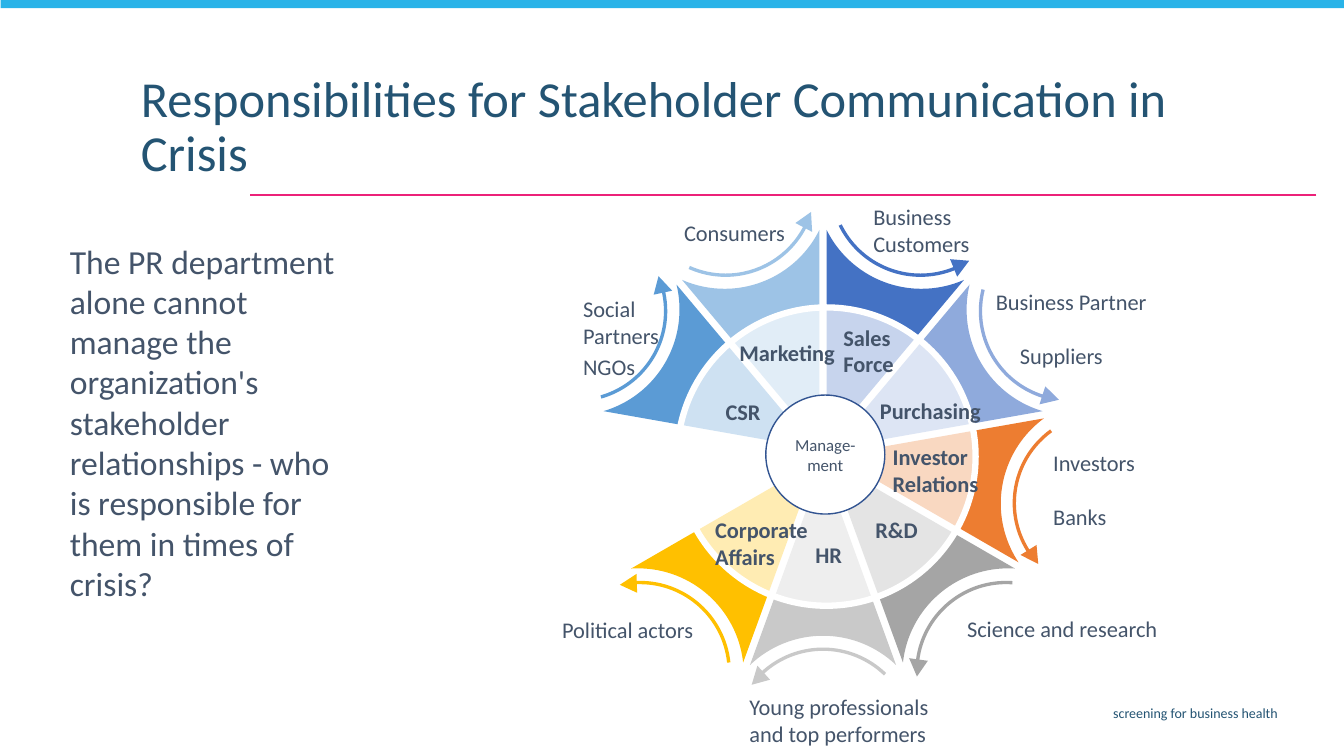
import math
from dataclasses import dataclass

import pptx
import pptx.dml.color
import pptx.enum.shapes
import pptx.enum.text
import pptx.util
from lxml import etree
from pptx.oxml.ns import qn

Pt = pptx.util.Pt
Align = pptx.enum.text.PP_ALIGN
Anchor = pptx.enum.text.MSO_ANCHOR
Preset = pptx.enum.shapes.MSO_SHAPE
Point = tuple[float, float]
Segment = list[Point]

FONT = "Calibri"
TEXT_COLOUR = "44546A"
HEADING_COLOUR = "245473"

# Wheel geometry: points and degrees, angles clockwise from north
WHEEL_CENTRE = (587.9, 324)
SECTOR_HALF_SPAN = 20
APEX_OFFSET = 7.5
SECTOR_LENGTH = 152.6
RIM_RADIUS = 75.6
RIM_DISTANCE, ARROW_DISTANCE = 205.7, 203.5
RIM_HALF_SPAN = math.degrees(
    math.asin(SECTOR_LENGTH * math.sin(math.radians(SECTOR_HALF_SPAN)) / RIM_RADIUS)
)
ARROW_INNER, ARROW_OUTER = 62.6, 65
HEAD_INNER, HEAD_OUTER = 56.5, 70
ARROW_TAIL, ARROW_BASE, ARROW_TIP = 44, -42, -53


@dataclass
class Sector:
    angle: float
    colour: str


@dataclass
class Label:
    text: str
    left: float
    top: float
    width: float
    bold: bool = False
    align: Align = Align.LEFT


SECTORS = [
    Sector(20, "4472C4"),
    Sector(340, "9DC3E6"),
    Sector(300, "5B9BD5"),
    Sector(220, "FFC000"),
    Sector(180, "C9C9C9"),
    Sector(140, "A5A5A5"),
    Sector(100, "ED7D31"),
    Sector(60, "8FAADC"),
]

LABELS = [
    Label("CSR", 511.2, 280.8, 39.6, bold=True),
    Label("Marketing", 521.1, 238.7, 83.5, bold=True),
    Label("Sales\nForce", 595.4, 227.7, 52.6, bold=True),
    Label("Purchasing", 621.4, 280.1, 87.8, bold=True),
    Label("Investor\nRelations", 630.5, 312.9, 76.3, bold=True),
    Label("R&D", 618.2, 365.3, 45.4, bold=True),
    Label("HR", 575.3, 383, 33.8, bold=True),
    Label("Corporate\nAffairs", 503.7, 365.3, 82.1, bold=True),
    Label("Social\nPartners", 409.4, 207.4, 69.8),
    Label("NGOs", 409.4, 248.4, 52.6),
    Label("Consumers", 481.5, 152.9, 87.8),
    Label("Business\nCustomers", 616.7, 141.8, 84.2),
    Label("Business Partner", 704.2, 202.3, 123.8),
    Label("Suppliers", 721.4, 240.9, 74.2),
    Label("Investors", 745.2, 317.2, 73.4),
    Label("Banks", 745.2, 355.7, 53.3),
    Label("Science and research", 683.7, 435.6, 151.9),
    Label("Young professionals\nand top performers", 528.2, 491.8, 144),
    Label("Political actors", 392.8, 436.3, 109.4, align=Align.RIGHT),
]


def colour(value: str) -> pptx.dml.color.RGBColor:
    return pptx.dml.color.RGBColor.from_string(value)


def polar(origin: Point, radius: float, angle: float) -> Point:
    radians = math.radians(angle)
    return origin[0] + radius * math.sin(radians), origin[1] - radius * math.cos(radians)


def arc(origin: Point, radius: float, start: float, end: float) -> list[Segment]:
    """Return two Bézier segments that meet where the arc is level or upright."""
    extreme = 90 * round((start + end) / 180)
    segments = []
    for first, last in ((start, extreme), (extreme, end)):
        handle = 4 / 3 * math.tan(math.radians(last - first) / 4) * radius
        finish = polar(origin, radius, last)
        segments.append([
            polar(polar(origin, radius, first), handle, first + 90),
            polar(finish, -handle, last + 90),
            finish,
        ])
    return segments


def format_shape(shape, fill: str, line: str = "", line_width: float = 0) -> None:
    shape.shadow.inherit = False
    shape.fill.solid()
    shape.fill.fore_color.rgb = colour(fill)
    if line:
        shape.line.color.rgb = colour(line)
        shape.line.width = Pt(line_width)
    else:
        shape.line.fill.background()


def add_outline(shapes, start: Point, segments: list[Segment], fill: str) -> None:
    """Draw a closed outline; one-point segments are straight, three-point ones Bézier."""
    builder = shapes.build_freeform(Pt(start[0]), Pt(start[1]))
    builder.add_line_segments([(Pt(x), Pt(y)) for segment in segments for x, y in segment])
    shape = builder.convert_to_shape()
    steps = iter(list(shape._element.iter(qn("a:lnTo"))))
    for segment in segments:
        step = next(steps)
        if len(segment) == 3:
            step.tag = qn("a:cubicBezTo")
            for extra in (next(steps), next(steps)):
                step.append(extra[0])
                extra.getparent().remove(extra)
    format_shape(shape, fill)


def add_circle(slide, left: float, top: float, diameter: float, line: str, line_width: float):
    circle = slide.shapes.add_shape(Preset.OVAL, Pt(left), Pt(top), Pt(diameter), Pt(diameter))
    format_shape(circle, "FFFFFF", line, line_width)
    return circle


def write_text(shape, text: str, size: float, font_colour: str = TEXT_COLOUR,
               bold: bool = False, align: Align = Align.LEFT, wrap: bool = True,
               anchor: Anchor = Anchor.TOP) -> None:
    frame = shape.text_frame
    frame.word_wrap = wrap
    frame.auto_size = pptx.enum.text.MSO_AUTO_SIZE.NONE
    frame.vertical_anchor = anchor
    paragraph = frame.paragraphs[0]
    paragraph.alignment = align
    for index, line in enumerate(text.split("\n")):
        if index:
            paragraph.add_line_break()
        run = paragraph.add_run()
        run.text = line
        run.font.name = FONT
        run.font.size = Pt(size)
        run.font.bold = bold
        run.font.color.rgb = colour(font_colour)


def add_text_box(slide, left: float, top: float, width: float, height: float):
    return slide.shapes.add_textbox(Pt(left), Pt(top), Pt(width), Pt(height))


def add_label(slide, label: Label) -> None:
    height = 7.2 + 19.5 * len(label.text.split("\n"))
    box = add_text_box(slide, label.left, label.top, label.width, height)
    write_text(box, label.text, 16, bold=label.bold, align=label.align, wrap=False)


def add_wedge(shapes, sector: Sector) -> None:
    apex = polar(WHEEL_CENTRE, APEX_OFFSET, sector.angle)
    origin = polar(WHEEL_CENTRE, RIM_DISTANCE, sector.angle)
    start, end = sector.angle + 180 + RIM_HALF_SPAN, sector.angle + 180 - RIM_HALF_SPAN
    rim = arc(origin, RIM_RADIUS, start, end)
    add_outline(shapes, apex, [[polar(origin, RIM_RADIUS, start)], *rim, [apex]], sector.colour)


def add_arrow(shapes, sector: Sector) -> None:
    origin = polar(WHEEL_CENTRE, ARROW_DISTANCE, sector.angle)
    tail, base, tip = (sector.angle + 180 + turn for turn in (ARROW_TAIL, ARROW_BASE, ARROW_TIP))
    start = polar(origin, ARROW_OUTER, tail)
    head = [
        [polar(origin, HEAD_OUTER, base)],
        [polar(origin, (ARROW_INNER + ARROW_OUTER) / 2, tip)],
        [polar(origin, HEAD_INNER, base)],
        [polar(origin, ARROW_INNER, base)],
    ]
    outer = arc(origin, ARROW_OUTER, tail, base)
    inner = arc(origin, ARROW_INNER, base, tail)
    add_outline(shapes, start, [*outer, *head, *inner, [start]], sector.colour)


def add_frame(slide) -> None:
    rule = slide.shapes.add_connector(
        pptx.enum.shapes.MSO_CONNECTOR.STRAIGHT, Pt(940.3), Pt(139), Pt(178.6), Pt(139))
    rule.line.color.rgb = colour("EC2179")
    rule.line.width = Pt(1.5)
    etree.SubElement(rule._element.spPr, qn("a:effectLst"))
    bar = slide.shapes.add_shape(Preset.RECTANGLE, Pt(0.5), Pt(-1.4), Pt(960), Pt(7.2))
    format_shape(bar, "29B3E8")
    tagline = add_text_box(slide, 262.4, 499.7, 657.4, 20.9)
    write_text(tagline, "screening for business health", 10, HEADING_COLOUR, align=Align.RIGHT)


def add_title(slide) -> None:
    title = slide.shapes.title
    title.left, title.top, title.width, title.height = Pt(93.4), Pt(49), Pt(803.5), Pt(69.1)
    write_text(title, "Responsibilities for Stakeholder Communication in Crisis", 36, HEADING_COLOUR)
    title.text_frame.paragraphs[0].line_spacing = 0.9


def add_wheel(slide) -> None:
    group = slide.shapes.add_group_shape()
    for add_part in (add_wedge, add_arrow):
        for sector in SECTORS:
            add_part(group.shapes, sector)
    veil = add_circle(slide, 483.8, 219.6, 213.1, "FFFFFF", 4.5)
    veil_colour = veil._element.spPr.find(qn("a:solidFill"))[0]
    etree.SubElement(veil_colour, qn("a:alpha"), val="70000")
    hub = add_circle(slide, 547, 282.2, 85, "325491", 1)
    write_text(hub, "Manage-ment", 12, align=Align.CENTER, anchor=Anchor.MIDDLE)


def main() -> None:
    presentation = pptx.Presentation()
    presentation.slide_width, presentation.slide_height = Pt(960), Pt(540)
    slide = presentation.slides.add_slide(presentation.slide_layouts[5])
    add_frame(slide)
    add_title(slide)
    question = add_text_box(slide, 42.8, 168.2, 203.8, 268.6)
    write_text(question, "The PR department alone cannot manage the organization's stakeholder "
               "relationships - who is responsible for them in times of crisis?", 24)
    add_wheel(slide)
    for label in LABELS:
        add_label(slide, label)
    presentation.save("out.pptx")


if __name__ == "__main__":
    main()
